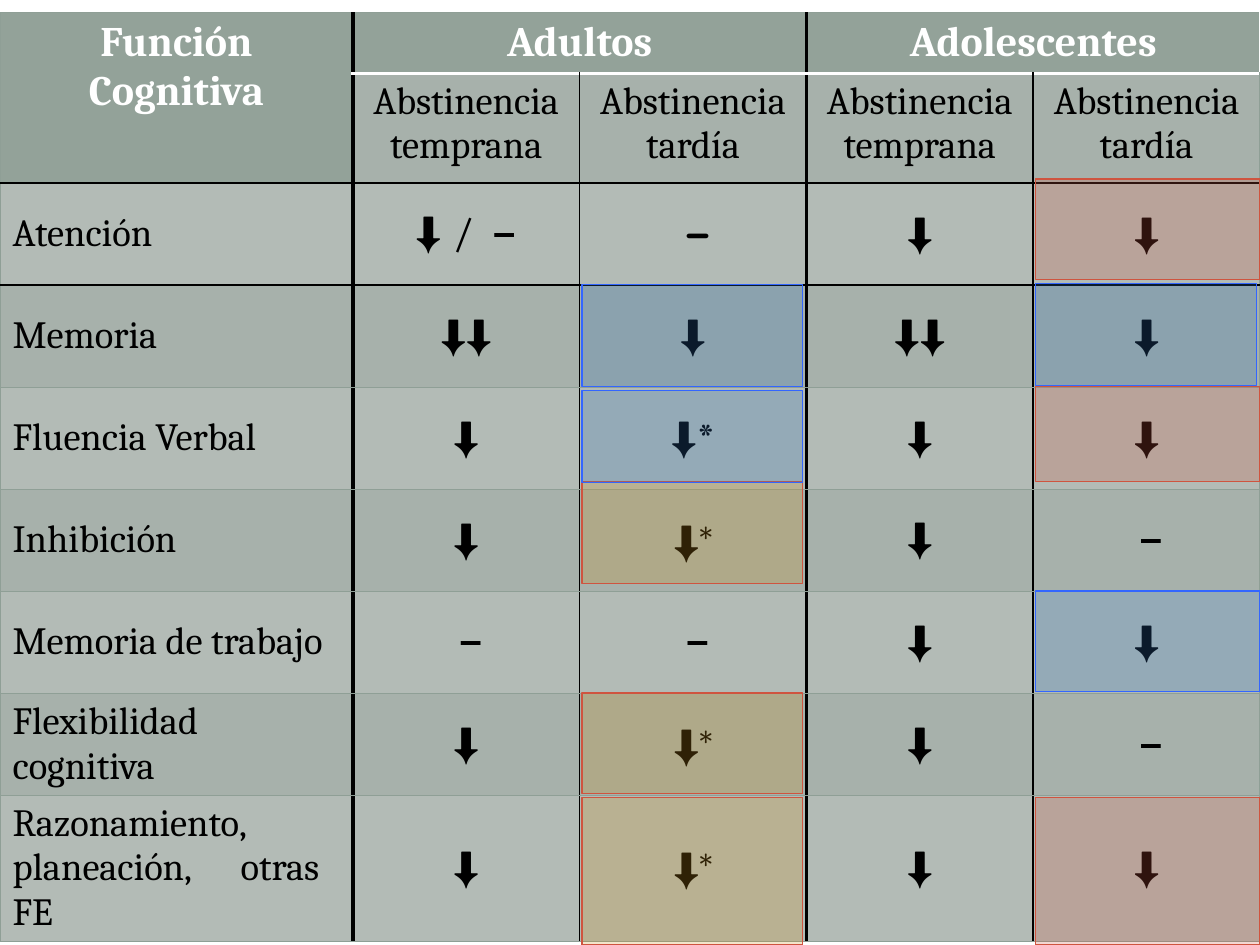
import lxml.etree
import pptx
import pptx.dml.color
import pptx.enum.shapes
import pptx.enum.text
import pptx.oxml.ns
import pptx.util

SAGE, PALE, DEEP, EDGE = "93A299", "B3BBB6", "A7B1AB", "8F9F96"
BLACK, WHITE, RED, GOLD, NAVY, BLUE = "000000", "FFFFFF", "CF543F", "CD921B", "3073BB", "3366FF"
MID, TOP = pptx.enum.text.MSO_ANCHOR.MIDDLE, pptx.enum.text.MSO_ANCHOR.TOP
LEFT, MIDST = pptx.enum.text.PP_ALIGN.LEFT, pptx.enum.text.PP_ALIGN.CENTER


def hue(code):
    return pptx.dml.color.RGBColor.from_string(code)


def node(base, tag, **attrs):
    return lxml.etree.SubElement(base, pptx.oxml.ns.qn(tag), **attrs)


def mark(text, font="Arial", size=24, bold=False):
    return text, {"name": font, "size": pptx.util.Pt(size), "bold": bold}


class Page:
    """Hold the style and the current slide, measured on a 100 by 75 grid."""

    def __init__(self, deck):
        self.slide = deck.slides.add_slide(deck.slide_layouts[6])
        self.wide, self.high = deck.slide_width / 100, deck.slide_height / 75

    def grid(self, left, top, cols, rows):
        size = [round(sum(cols) * self.wide), round(sum(rows) * self.high)]
        frame = self.slide.shapes.add_table(
            len(rows), len(cols), round(left * self.wide), round(top * self.high), *size)
        table = frame.table
        table.first_row = table.horz_banding = False
        for col, width in zip(table.columns, cols):
            col.width = round(width * self.wide)
        for row, height in zip(table.rows, rows):
            row.height = round(height * self.high)
        return table

    def rim(self, cell, edges):
        props = cell._tc.get_or_add_tcPr()
        for side, edge in zip("LRTB", edges):
            if edge:
                code, width = edge
                line = node(props, f"a:ln{side}", w=str(pptx.util.Pt(width)))
                node(node(line, "a:solidFill"), "a:srgbClr", val=code)

    def tint(self, cell, code):
        cell.fill.solid()
        cell.fill.fore_color.rgb = hue(code)

    def text(self, cell, marks, align=MIDST, anchor=MID, code=BLACK, tab=None):
        cell.vertical_anchor = anchor
        para = cell.text_frame.paragraphs[0]
        para.alignment = align
        if tab:
            stops = node(para._p.get_or_add_pPr(), "a:tabLst")
            node(stops, "a:tab", pos=str(round(tab * self.wide)), algn="l")
        for words, style in marks:
            run = para.add_run()
            run.text = words
            for name, value in style.items():
                setattr(run.font, name, value)
            run.font.color.rgb = hue(code)

    def box(self, left, top, width, height, fill, line):
        shape = self.slide.shapes.add_shape(
            pptx.enum.shapes.MSO_SHAPE.RECTANGLE,
            round(left * self.wide), round(top * self.high),
            round(width * self.wide), round(height * self.high))
        shape.shadow.inherit = False
        shape.fill.solid()
        shape.fill.fore_color.rgb = hue(fill)
        color = shape._element.spPr.find(".//" + pptx.oxml.ns.qn("a:srgbClr"))
        node(color, "a:alpha", val="23000")
        shape.line.color.rgb = hue(line)
        shape.line.width = pptx.util.Pt(0.75)


DOWN = mark("⬇")
SERIF = mark("⬇", "Cambria")
STAR = mark("*", "Quicksand")
DASH = mark(" −", "Cambria", bold=True)
GAP = mark(" ", "Quicksand", 18, True)
LATE = [GAP, mark("−", "Cambria", bold=True)]

BODY = [
    ("Atención", [mark("⬇ "), mark("/ ", "Cambria"), DASH],
     [mark(" ", "Cambria", bold=True), mark("−", "Quicksand", bold=True)], [DOWN], [DOWN]),
    ("Memoria", [mark("⬇⬇")], [DOWN], [mark("⬇⬇")], [DOWN]),
    ("Fluencia Verbal", [DOWN], [DOWN, mark("*", "Cambria")], [DOWN], [DOWN]),
    ("Inhibición", [DOWN], [DOWN, STAR], [SERIF], LATE),
    ("Memoria de trabajo", [DASH], [DASH], [DOWN], [DOWN]),
    ("Flexibilidad cognitiva", [DOWN], [DOWN, STAR], [SERIF], LATE),
    ("Razonamiento, planeación,\totras FE", [DOWN], [DOWN, STAR], [DOWN], [DOWN]),
]
HEADS = {0: "Función Cognitiva", 1: "Adultos", 3: "Adolescentes"}
TERMS = ["Abstinencia temprana", "Abstinencia tardía"] * 2
COLS = [28] + [18] * 4
ROWS = [4.8, 8.7] + [8.1] * 6 + [11.5]
THIN, SLIM, BOLD = (EDGE, 0.75), (BLACK, 1), (BLACK, 2.25)
SIDES = [THIN, BOLD, SLIM, BOLD, SLIM, THIN]
LEVELS = [THIN, (WHITE, 2), SLIM, SLIM] + [THIN] * 6
ADULT, TEEN = (46.2, 17.5), (82.2, 17.8)
ZONES = [
    (RED, RED, TEEN, [(14.2, 8), (30.7, 7.5), (63.3, 11.7)]),
    (GOLD, RED, ADULT, [(38.2, 8.1), (55, 8), (63.3, 11.7)]),
    (NAVY, BLUE, ADULT, [(31, 7.3), (22.6, 8.1)]),
    (NAVY, BLUE, TEEN, [(46.9, 8)]),
    (NAVY, BLUE, (82.2, 17.5), [(22.5, 8.1)]),
]


def side(row, edge):
    return None if row == 0 and edge in (2, 4) else SIDES[edge]


def level(col, edge):
    return None if col == 0 and edge == 1 else LEVELS[edge]


def main():
    deck = pptx.Presentation()
    deck.slide_width, deck.slide_height = pptx.util.Inches(10), pptx.util.Inches(7.5)
    page = Page(deck)
    table = page.grid(0, 1, COLS, ROWS)
    for row in range(len(ROWS)):
        for col in range(len(COLS)):
            cell = table.cell(row, col)
            page.rim(cell, [side(row, col), side(row, col + 1),
                            level(col, row), level(col, row + 1)])
            head = row == 0 or (row == 1 and col == 0)
            page.tint(cell, SAGE if head else DEEP if row % 2 else PALE)
    for first, last in [((0, 0), (1, 0)), ((0, 1), (0, 2)), ((0, 3), (0, 4))]:
        table.cell(*first).merge(table.cell(*last))
    for col, words in HEADS.items():
        page.text(table.cell(0, col), [mark(words, "Cambria", 24, True)],
                  anchor=MID if col else TOP, code=WHITE)
    for col, words in enumerate(TERMS, 1):
        page.text(table.cell(1, col), [mark(words, "Cambria", 22)], anchor=TOP)
    for row, (name, *cells) in enumerate(BODY, 2):
        page.text(table.cell(row, 0), [mark(name, "Cambria", 22)], LEFT,
                  tab=18.1 if "\t" in name else None)
        for col, marks in enumerate(cells, 1):
            page.text(table.cell(row, col), marks)
    for fill, line, (left, width), spans in ZONES:
        for top, height in spans:
            page.box(left, top, width, height, fill, line)
    deck.save("out.pptx")


if __name__ == "__main__":
    main()
